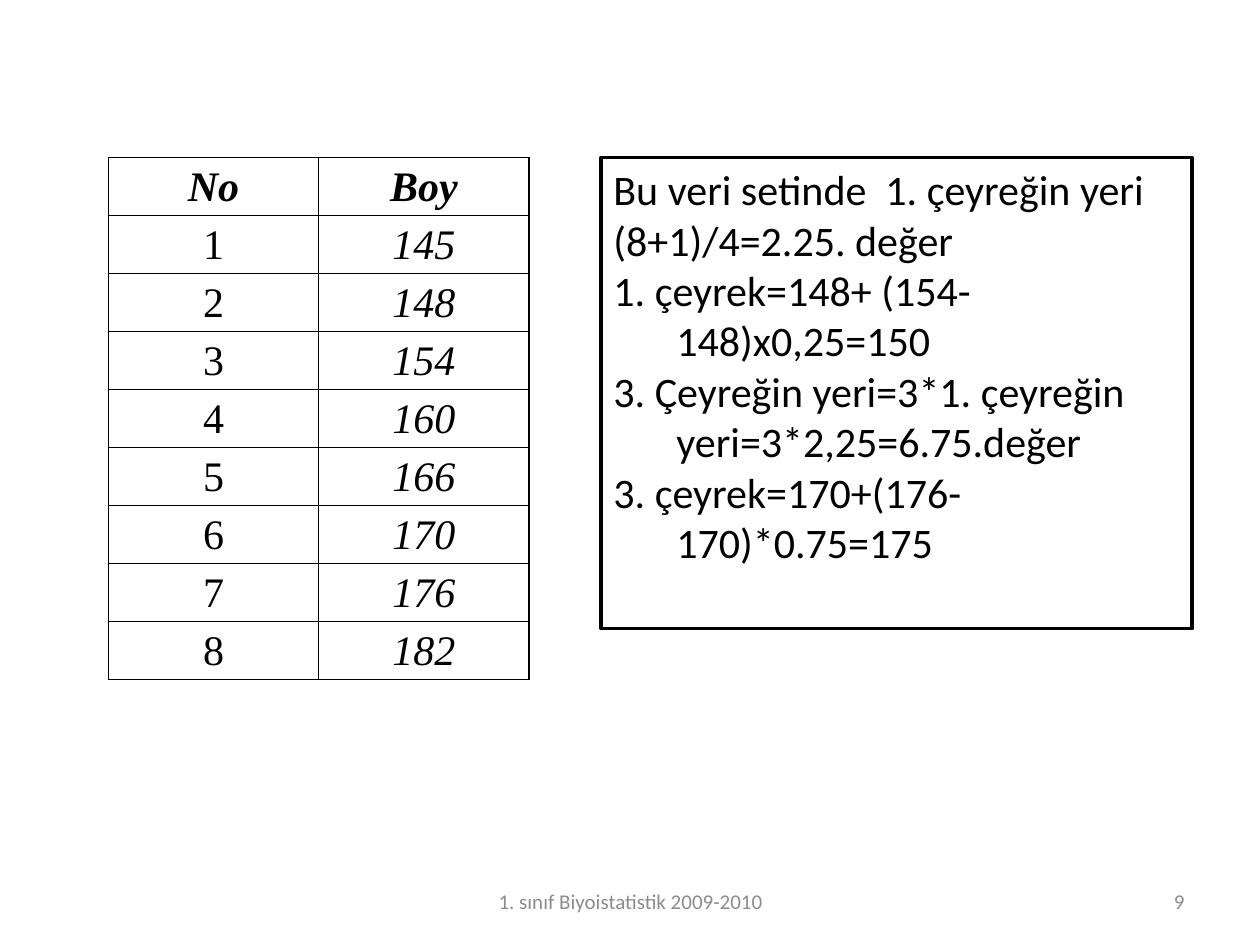
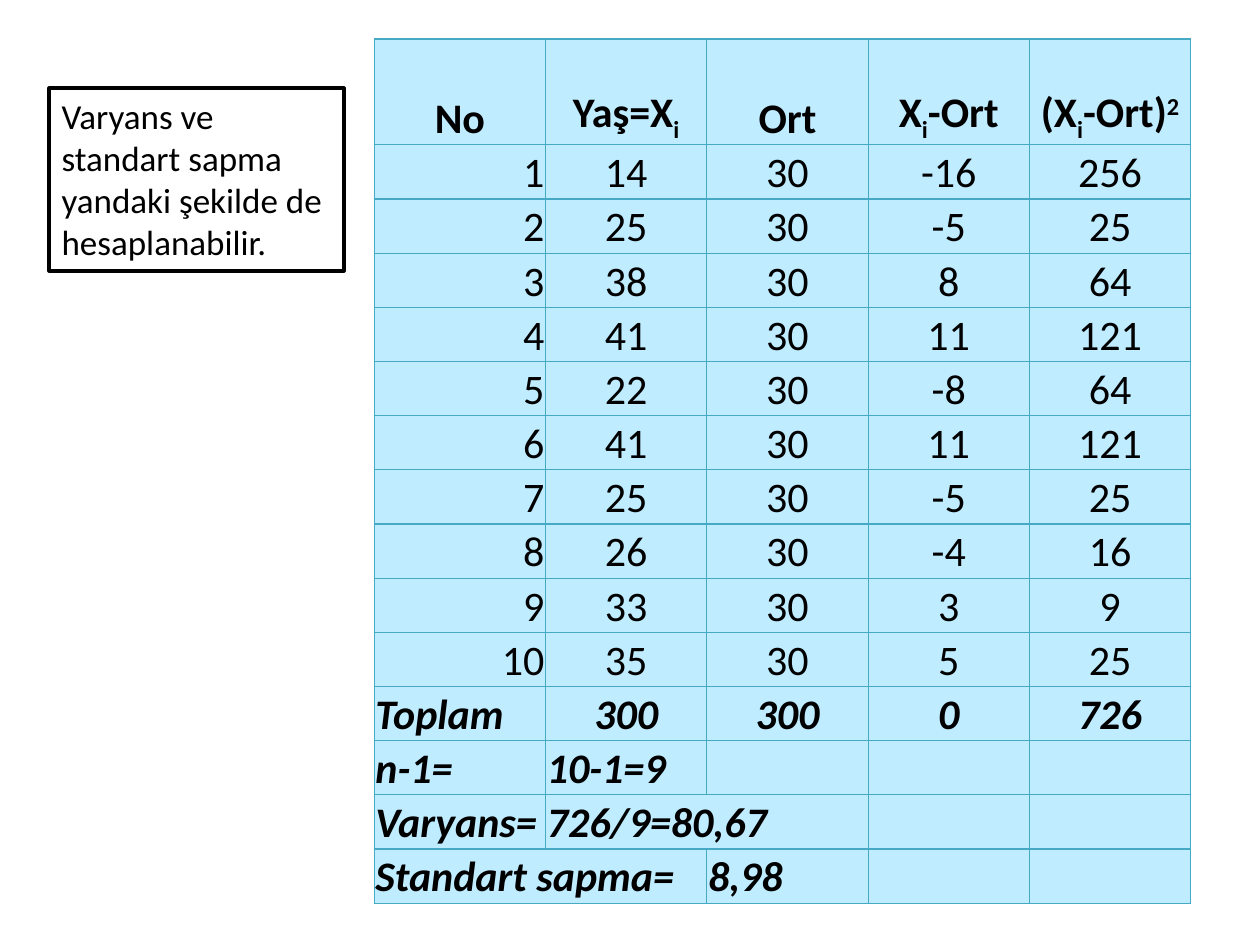
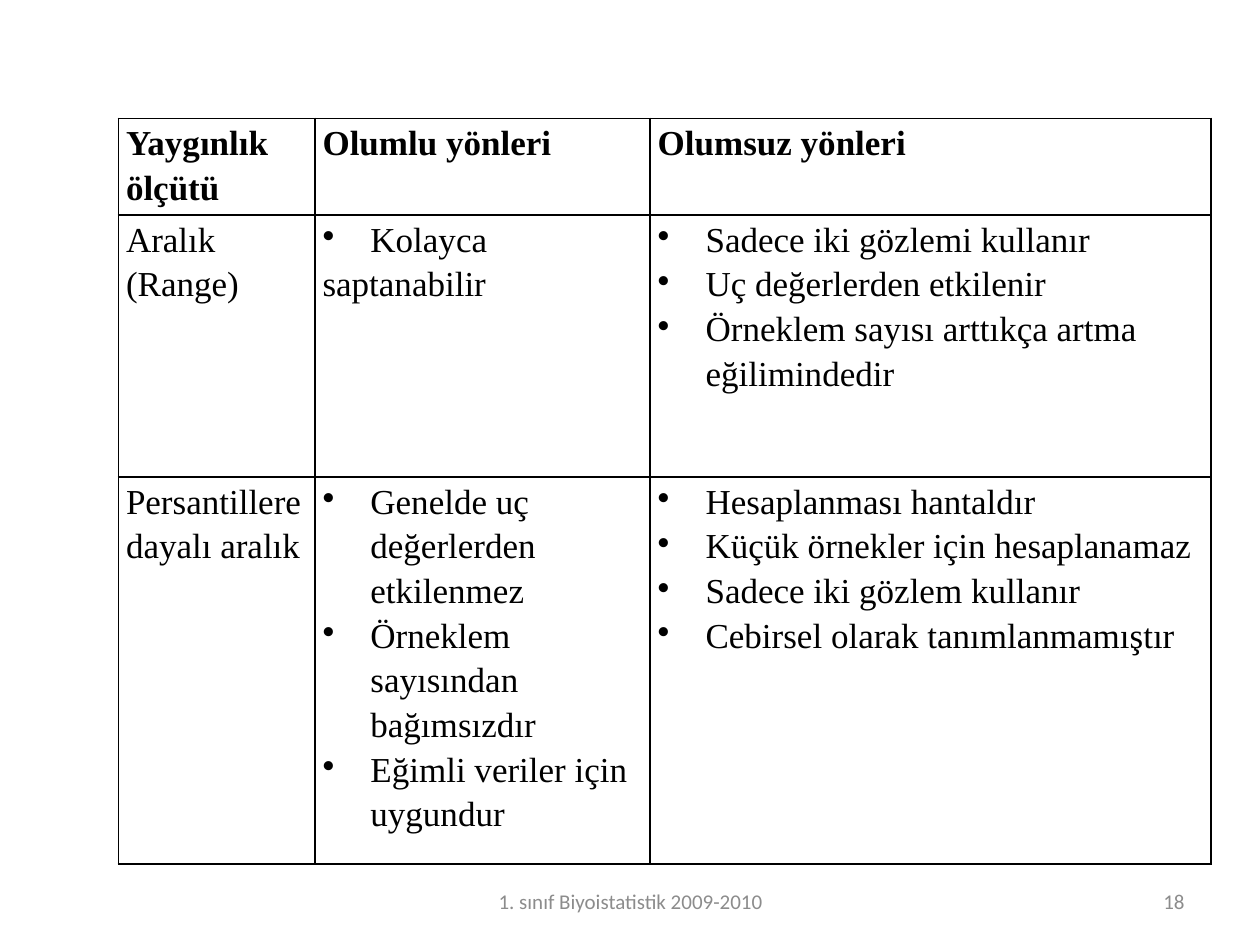
"""Build three biostatistics slides: quartiles, variance and measures of spread."""
from lxml.etree import SubElement as Sub
from pptx import Presentation
from pptx.dml.color import RGBColor
from pptx.enum.shapes import MSO_SHAPE as Shape
from pptx.enum.text import MSO_ANCHOR as Anchor, PP_ALIGN as Align
from pptx.oxml.ns import qn
from pptx.util import Inches as In, Pt

hue = RGBColor.from_string
BLACK, WHITE, GREY, TEAL, SKY = "000000", "FFFFFF", "8C8C8C", "46AAC5", "BFECFF"
SANS, SERIF = "Calibri", "Times New Roman"
SHIFT = {"_": "-25000", "^": "30000"}


def write(frame, text, font, align=Align.LEFT, space=None, hang=0, tint=BLACK):
    """Fill a frame; lines part at newlines, and |_ or |^ lowers or lifts a run."""
    for num, line in enumerate(text.split("\n")):
        para = frame.add_paragraph() if num else frame.paragraphs[0]
        para.alignment = align
        if space:
            para.line_spacing = space
        props = para._p.get_or_add_pPr()
        if hang and not line.startswith("("):
            props.set("marL", str(In(hang)))
            props.set("indent", str(-In(hang)))
        if line.startswith("•"):
            Sub(props, qn("a:buChar"), char="•")
            line = line[1:]
        for bit in line.split("|"):
            run = para.add_run()
            run.text = bit[1:] if bit[0] in SHIFT else bit
            for key, val in font.items():
                setattr(run.font, key, val)
            run.font.color.rgb = hue(tint)
            if bit[0] in SHIFT:
                run._r.get_or_add_rPr().set("baseline", SHIFT[bit[0]])


def grid(slide, at, cols, rows, data, look, pads, edge, width, fill):
    """Add a table; None joins a cell to the one on its left."""
    size = [In(v) for v in (*at, sum(cols), sum(rows))]
    table = slide.shapes.add_table(len(rows), len(cols), *size).table
    table.first_row = table.horz_banding = False
    for col, span in zip(table.columns, cols):
        col.width = In(span)
    for row, span in zip(table.rows, rows):
        row.height = In(span)
    for r, line in enumerate(data):
        for c, text in enumerate(line):
            cell = table.cell(r, c)
            props = cell._tc.get_or_add_tcPr()
            for side in "LRTB":
                rule = Sub(props, qn("a:ln" + side), w=str(Pt(width)))
                Sub(Sub(rule, qn("a:solidFill")), qn("a:srgbClr"), val=edge)
            cell.fill.solid()
            cell.fill.fore_color.rgb = hue(fill)
            if text is None:
                table.cell(r, c - 1).merge(cell)
            elif text:
                for key, val in pads.items():
                    setattr(cell, key, val)
                write(cell.text_frame, text, **look(r, c))


deck = Presentation()
deck.slide_width, deck.slide_height = In(10), In(7.5)
first, second, third = [deck.slides.add_slide(deck.slide_layouts[6]) for _ in range(3)]

for slide, page in ((first, "9"), (third, "18")):
    for left, span, text, align in (
        (7.17, 2.33, page, Align.RIGHT),
        (3.42, 3.17, "1. sınıf Biyoistatistik 2009-2010", Align.CENTER),
    ):
        frame = slide.shapes.add_textbox(In(left), In(6.95), In(span), In(0.4)).text_frame
        frame.word_wrap = True
        frame.vertical_anchor = Anchor.MIDDLE
        write(frame, text, {"name": SANS, "size": Pt(12)}, align, tint=GREY)

tall = [145, 148, 154, 160, 166, 170, 176, 182]
grid(
    first, (0.86, 1.25), [1.67] * 2, [0.42] * 9,
    [("No", "Boy")] + [(str(n), str(v)) for n, v in enumerate(tall, 1)],
    lambda r, c: {
        "font": {"name": SERIF, "size": Pt(24), "bold": r == 0, "italic": r == 0 or c == 1},
        "align": Align.CENTER, "space": 1.15,
    },
    {"margin_left": In(0.07), "margin_right": In(0.07), "margin_top": 0, "margin_bottom": 0},
    BLACK, 1, WHITE,
)

ages = [14, 25, 38, 41, 22, 41, 25, 26, 33, 35]
mean = sum(ages) // len(ages)
gaps = [age - mean for age in ages]
sums = [sum(ages), mean * len(ages), sum(gaps), sum(gap ** 2 for gap in gaps)]
facts = [("No", "Yaş=X|_i", "Ort", "X|_i|-Ort", "(X|_i|-Ort)|^2")]
for num, (age, gap) in enumerate(zip(ages, gaps), 1):
    facts.append([str(v) for v in (num, age, mean, gap, gap ** 2)])
facts += [
    ["Toplam"] + [str(v) for v in sums],
    ("n-1=", "10-1=9", "", "", ""),
    ("Varyans=", "726/9=80,67", None, "", ""),
    ("Standart sapma=", None, "8,98", "", ""),
]
total = len(ages) + 1


def place(r, c):
    """Style a cell of the variance table."""
    align = Align.CENTER
    if r > total or (r == total and c == 0):
        align = Align.LEFT
    elif r and c == 0:
        align = Align.RIGHT
    heavy = r == 0 or r >= total
    return {"font": {"name": SANS, "size": Pt(24), "bold": heavy, "italic": r >= total},
            "align": align}


grid(
    second, (2.97, 0.31), [1.36] + [1.28] * 4, [0.84] + [0.43] * 14, facts, place,
    {"margin_left": In(0.01), "margin_right": In(0.01), "margin_top": In(0.01),
     "margin_bottom": 0, "vertical_anchor": Anchor.BOTTOM},
    TEAL, 0.75, SKY,
)

grid(
    third, (0.94, 0.94), [1.56, 2.66, 4.45], [0.3, 2.08, 2.38],
    [
        ("Yaygınlık\nölçütü", "Olumlu yönleri", "Olumsuz yönleri"),
        ("Aralık\n(Range)", "•Kolayca\nsaptanabilir",
         "•Sadece iki gözlemi kullanır\n•Uç değerlerden etkilenir\n"
         "•Örneklem sayısı arttıkça artma eğilimindedir"),
        ("Persantillere\ndayalı aralık",
         "•Genelde uç değerlerden etkilenmez\n•Örneklem sayısından bağımsızdır\n"
         "•Eğimli veriler için uygundur",
         "•Hesaplanması hantaldır\n•Küçük örnekler için hesaplanamaz\n"
         "•Sadece iki gözlem kullanır\n•Cebirsel olarak tanımlanmamıştır"),
    ],
    lambda r, c: {
        "font": {"name": SERIF, "size": Pt(20), "bold": r == 0},
        "space": 1.15, "hang": 0.38 if r and c else 0,
    },
    {"margin_left": In(0.06), "margin_right": In(0.06), "margin_top": 0, "margin_bottom": 0},
    BLACK, 1, WHITE,
)

for slide, at, size, hang, text in (
    (first, (4.77, 1.25, 4.69, 3.74), 24, 0.5,
     "Bu veri setinde  1. çeyreğin yeri\n(8+1)/4=2.25. değer\n"
     "1. çeyrek=148+ (154-148)x0,25=150\n"
     "3. Çeyreğin yeri=3*1. çeyreğin yeri=3*2,25=6.75.değer\n"
     "3. çeyrek=170+(176-170)*0.75=175"),
    (second, (0.39, 0.7, 2.34, 1.45), 20, 0,
     "Varyans ve standart sapma yandaki şekilde de hesaplanabilir."),
):
    box = slide.shapes.add_shape(Shape.RECTANGLE, *[In(v) for v in at])
    box.shadow.inherit = False
    box.fill.solid()
    box.fill.fore_color.rgb = hue(WHITE)
    box.line.color.rgb = hue(BLACK)
    box.line.width = Pt(2)
    box.text_frame.word_wrap = True
    box.text_frame.vertical_anchor = Anchor.TOP
    write(box.text_frame, text, {"name": SANS, "size": Pt(size)}, hang=hang)

deck.save("out.pptx")
